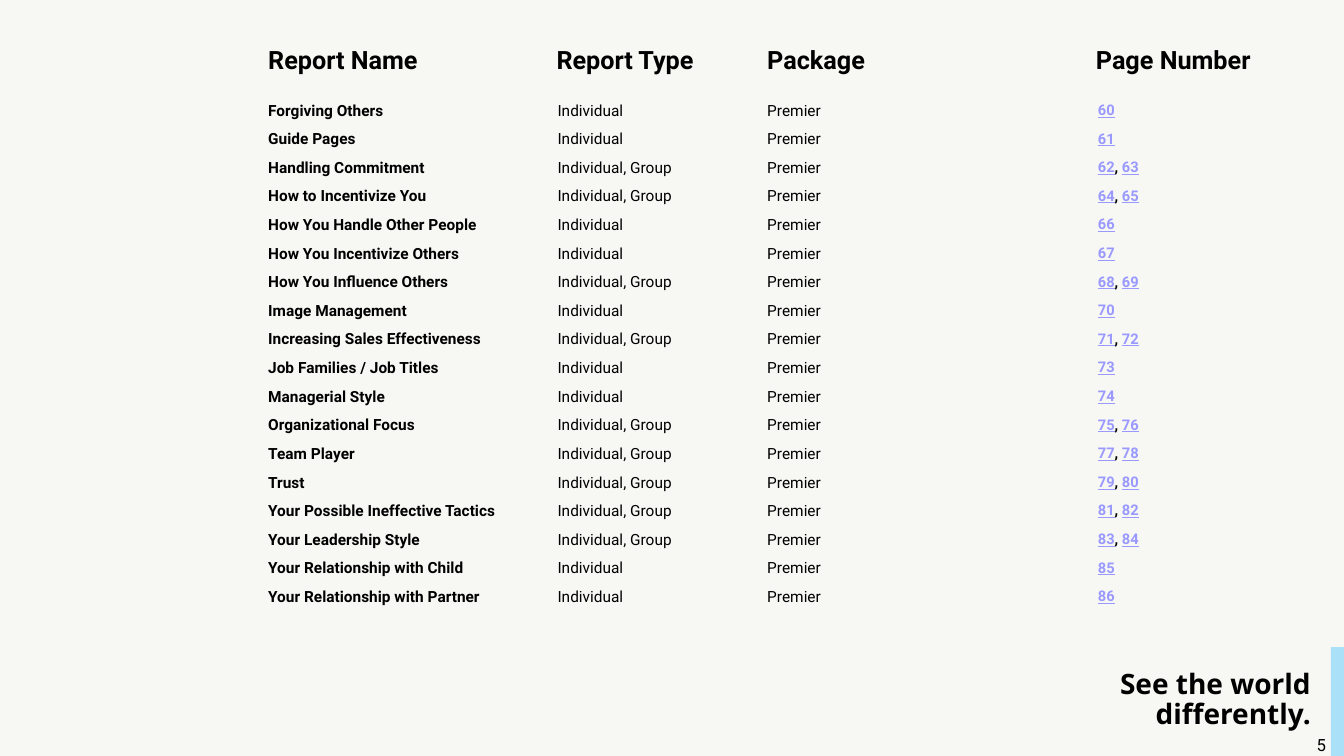
from pptx import Presentation
from pptx.dml.color import RGBColor
from pptx.enum.shapes import MSO_SHAPE as Shape
from pptx.enum.text import PP_ALIGN as Align
from pptx.oxml.ns import qn
from pptx.util import Inches, Pt

HEADS = ["Report Name", "Report Type", "Package", "Page Number"]
SOLO, BOTH = "Individual", "Individual, Group"
PACK = "Premier"
REPORTS = [
    ("Forgiving Others", SOLO, [60]),
    ("Guide Pages", SOLO, [61]),
    ("Handling Commitment", BOTH, [62, 63]),
    ("How to Incentivize You", BOTH, [64, 65]),
    ("How You Handle Other People", SOLO, [66]),
    ("How You Incentivize Others", SOLO, [67]),
    ("How You Influence Others", BOTH, [68, 69]),
    ("Image Management", SOLO, [70]),
    ("Increasing Sales Effectiveness", BOTH, [71, 72]),
    ("Job Families / Job Titles", SOLO, [73]),
    ("Managerial Style", SOLO, [74]),
    ("Organizational Focus", BOTH, [75, 76]),
    ("Team Player", BOTH, [77, 78]),
    ("Trust", BOTH, [79, 80]),
    ("Your Possible Ineffective Tactics", BOTH, [81, 82]),
    ("Your Leadership Style", BOTH, [83, 84]),
    ("Your Relationship with Child", SOLO, [85]),
    ("Your Relationship with Partner", SOLO, [86]),
]
TAGLINE = "See the world differently."
PAGE = "5"

LEFT, WIDTH = 2.56, 10.45
HEAD_TOP, HEAD_HIGH, HEAD_COLS = 0.41, 0.41, [2.86, 2.09, 3.26, 2.25]
LIST_TOP, LIST_HIGH, LIST_COLS = 0.96, 5.1, [2.87, 2.08, 3.28, 2.23]
INK, LINK, PAPER, SKY = "000000", "9999FF", "F7F7F3", "ABE1F8"
NO_STYLE = "{2D5ABB26-0587-4C30-8999-92F81FD0307C}"


def paint(fill, color):
    fill.solid()
    fill.fore_color.rgb = RGBColor.from_string(color)


def write(para, text, size=11, color=INK, bold=False, line=False, face="Roboto"):
    """Add one formatted run to a paragraph."""
    run = para.add_run()
    run.text = text
    font = run.font
    font.name, font.size = face, Pt(size)
    font.bold, font.underline = bold, line
    font.color.rgb = RGBColor.from_string(color)


def add_grid(slide, count, top, high, cols):
    """Add a table with no borders or fills and equal rows."""
    frame = slide.shapes.add_table(count, len(cols), Inches(LEFT), Inches(top),
                                   Inches(WIDTH), Inches(high))
    for style in frame.element.iter(qn("a:tableStyleId")):
        style.text = NO_STYLE
    grid = frame.table
    grid.first_row = grid.horz_banding = False
    for col, wide in zip(grid.columns, cols):
        col.width = Inches(wide)
    for row in grid.rows:
        row.height = Inches(high / count)
    for cell in grid.iter_cells():
        cell.fill.background()
    return grid


def add_box(slide, left, top, wide, high):
    """Add a wrapping text box and return its first paragraph."""
    box = slide.shapes.add_textbox(*map(Inches, (left, top, wide, high)))
    box.text_frame.word_wrap = True
    return box.text_frame.paragraphs[0]


def main():
    deck = Presentation()
    deck.slide_width, deck.slide_height = Inches(13.33), Inches(7.5)
    slide = deck.slides.add_slide(deck.slide_layouts[6])
    paint(slide.background.fill, PAPER)

    para = add_box(slide, 10.79, 6.6, 2.31, 0.77)
    para.alignment, para.line_spacing = Align.RIGHT, 0.9
    write(para, TAGLINE, size=20, bold=True, face="Open Sans")

    bar = slide.shapes.add_shape(Shape.RECTANGLE, Inches(13.2), Inches(6.42),
                                 Inches(0.14), Inches(1.08))
    bar.shadow.inherit = False
    paint(bar.fill, SKY)
    bar.line.fill.background()

    heads = add_grid(slide, 1, HEAD_TOP, HEAD_HIGH, HEAD_COLS)
    for cell, head in zip(heads.iter_cells(), HEADS):
        write(cell.text_frame.paragraphs[0], head, size=18, bold=True)

    grid = add_grid(slide, len(REPORTS), LIST_TOP, LIST_HIGH, LIST_COLS)
    for row, (name, kind, pages) in zip(grid.rows, REPORTS):
        paras = [cell.text_frame.paragraphs[0] for cell in row.cells]
        write(paras[0], name, bold=True)
        write(paras[1], kind)
        write(paras[2], PACK)
        for i, page in enumerate(pages):
            if i:
                write(paras[3], ", ", size=10.5, bold=True)
            write(paras[3], str(page), size=10.5, color=LINK, bold=True, line=True)

    write(add_box(slide, 12.96, 7.24, 0.35, 0.3), PAGE, size=12)
    deck.save("out.pptx")


if __name__ == "__main__":
    main()
